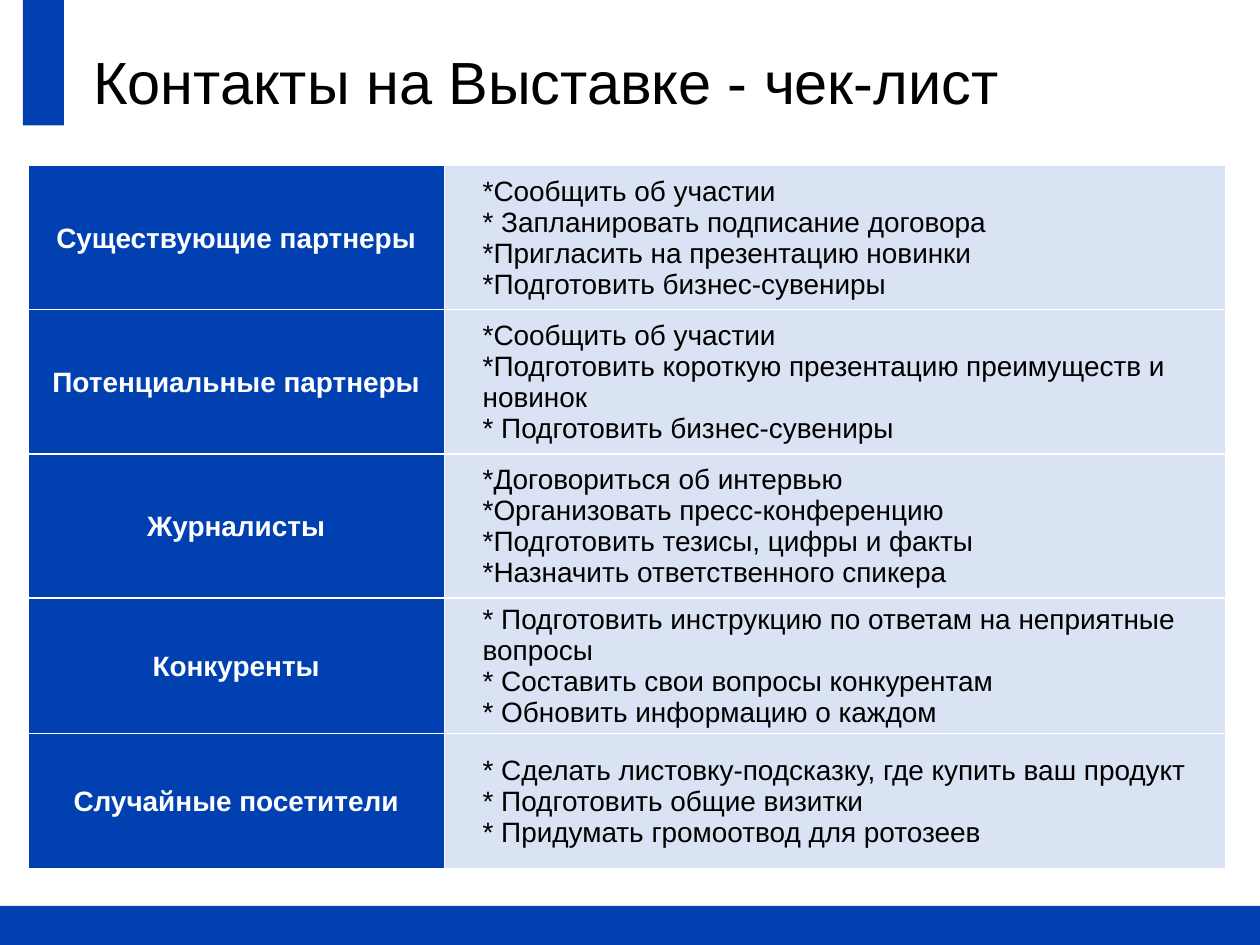
from lxml.etree import SubElement
from pptx import Presentation
from pptx.dml.color import RGBColor
from pptx.enum.shapes import MSO_SHAPE
from pptx.enum.text import MSO_ANCHOR, PP_ALIGN
from pptx.oxml.ns import qn
from pptx.util import Cm, Pt

BLUE = RGBColor(0x00, 0x40, 0xB1)
PALE_BLUE = RGBColor(0xDA, 0xE3, 0xF3)
WHITE = RGBColor(0xFF, 0xFF, 0xFF)
BLACK = RGBColor(0x00, 0x00, 0x00)
FONT = "Arial"
TABLE_SIZE = Pt(16)

TITLE = "Контакты на Выставке - чек-лист"
CHECKLIST = [
    ("Существующие партнеры", [
        "*Сообщить об участии",
        "* Запланировать подписание договора",
        "*Пригласить на презентацию новинки",
        "*Подготовить бизнес-сувениры",
    ]),
    ("Потенциальные партнеры", [
        "*Сообщить об участии",
        "*Подготовить короткую презентацию преимуществ и новинок",
        "* Подготовить бизнес-сувениры",
    ]),
    ("Журналисты", [
        "*Договориться об интервью",
        "*Организовать пресс-конференцию",
        "*Подготовить тезисы, цифры и факты",
        "*Назначить ответственного спикера",
    ]),
    ("Конкуренты", [
        "* Подготовить инструкцию по ответам на неприятные вопросы",
        "* Составить свои вопросы конкурентам",
        "* Обновить информацию о каждом",
    ]),
    ("Случайные посетители", [
        "* Сделать листовку-подсказку, где купить ваш продукт",
        "* Подготовить общие визитки",
        "* Придумать громоотвод для ротозеев",
    ]),
]

# Lengths in centimetres
BARS = [(0, 18.26, 25.4, 0.79), (0.46, 0, 0.83, 2.53)]
COLUMN_WIDTHS = [8.4, 15.75]
ROW_HEIGHTS = [2.9, 2.91, 2.9, 2.72, 2.72]


def add_bar(page, bounds):
    bar = page.shapes.add_shape(MSO_SHAPE.RECTANGLE, *map(Cm, bounds))
    bar.shadow.inherit = False
    bar.fill.solid()
    bar.fill.fore_color.rgb = BLUE
    bar.line.fill.background()


def style_font(span, size, color, bold=False):
    span.font.name = FONT
    span.font.size = size
    span.font.color.rgb = color
    span.font.bold = bold


def add_title(page):
    box = page.shapes.add_textbox(Cm(1.63), Cm(0.76), Cm(21.92), Cm(1.75))
    frame = box.text_frame
    frame.word_wrap = True
    frame.vertical_anchor = MSO_ANCHOR.MIDDLE
    frame.text = TITLE
    style_font(frame.paragraphs[0].runs[0], Pt(34), BLACK)


def add_borders(cell):
    properties = cell._tc.get_or_add_tcPr()
    for side in ("lnL", "lnR", "lnT", "lnB"):
        line = SubElement(properties, qn(f"a:{side}"), w=str(Pt(1)))
        fill = SubElement(line, qn("a:solidFill"))
        SubElement(fill, qn("a:srgbClr"), val=str(WHITE))


def fill_cell(cell, text, background, color, bold):
    add_borders(cell)
    cell.fill.solid()
    cell.fill.fore_color.rgb = background
    cell.vertical_anchor = MSO_ANCHOR.MIDDLE
    cell.margin_left = cell.margin_right = cell.margin_top = Cm(0.03)
    cell.margin_bottom = 0
    para = cell.text_frame.paragraphs[0]
    para.text = text
    for span in para.runs:
        style_font(span, TABLE_SIZE, color, bold)
    for line_break in para._p.findall(qn("a:br")):
        SubElement(line_break, qn("a:rPr"), sz=str(int(TABLE_SIZE.pt * 100)))
    return para


def add_checklist(page):
    frame = page.shapes.add_table(
        len(CHECKLIST), len(COLUMN_WIDTHS), Cm(0.56), Cm(3.34),
        Cm(sum(COLUMN_WIDTHS)), Cm(sum(ROW_HEIGHTS)))
    table = frame.table
    for column, width in zip(table.columns, COLUMN_WIDTHS):
        column.width = Cm(width)
    for row, height, (audience, tasks) in zip(table.rows, ROW_HEIGHTS, CHECKLIST):
        row.height = Cm(height)
        audience_cell, tasks_cell = row.cells
        para = fill_cell(audience_cell, audience, BLUE, WHITE, True)
        para.alignment = PP_ALIGN.CENTER
        para = fill_cell(tasks_cell, "\n".join(tasks), PALE_BLUE, BLACK, False)
        para._p.get_or_add_pPr().set("marL", str(Cm(0.74)))


def main():
    deck = Presentation()
    deck.slide_width, deck.slide_height = Cm(25.4), Cm(19.05)
    page = deck.slides.add_slide(deck.slide_layouts[6])
    for bounds in BARS:
        add_bar(page, bounds)
    add_title(page)
    add_checklist(page)
    deck.save("out.pptx")


if __name__ == "__main__":
    main()
